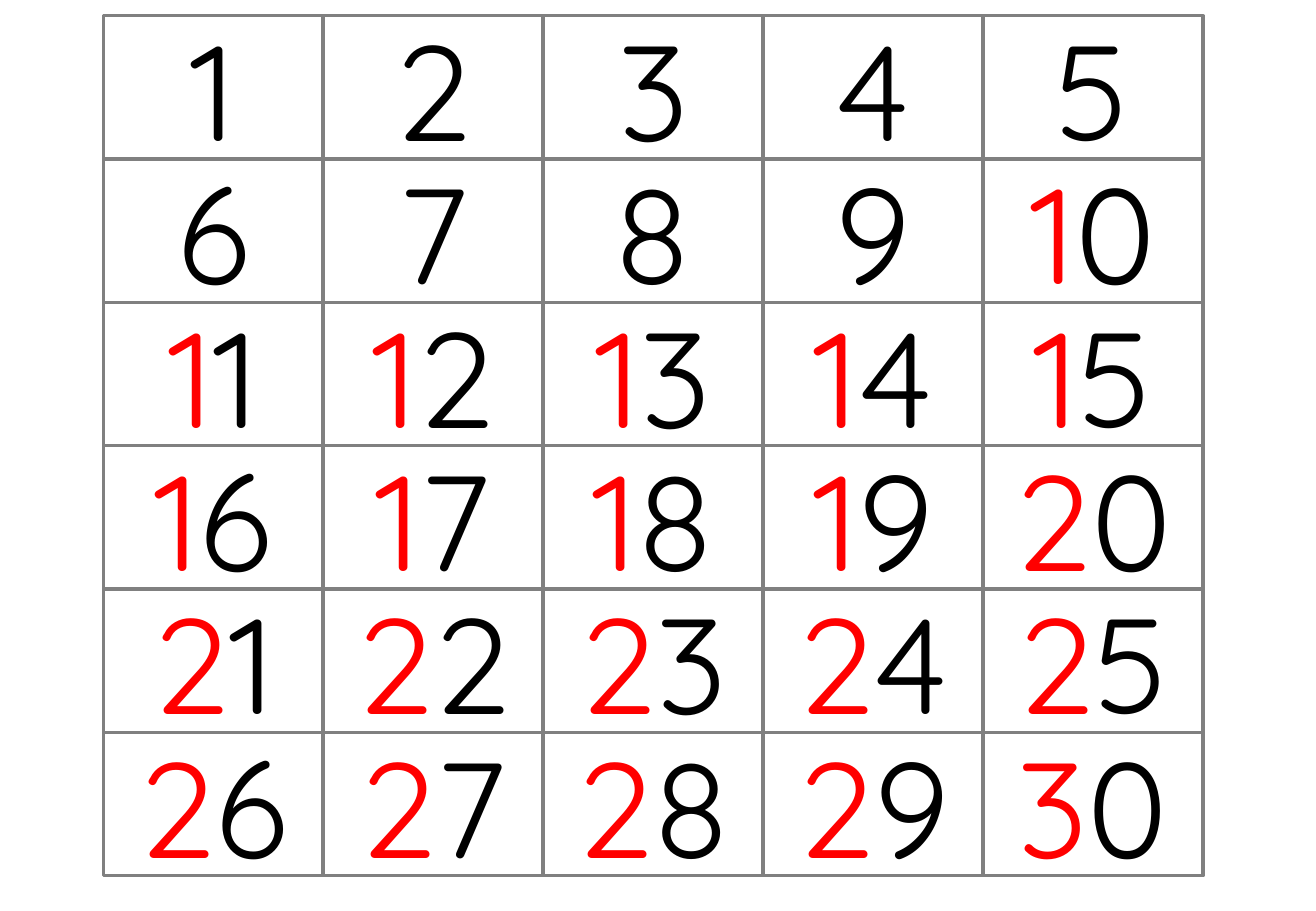
from pptx import Presentation
from pptx.dml.color import RGBColor
from pptx.enum.shapes import MSO_SHAPE as SHAPE
from pptx.enum.text import MSO_ANCHOR as ANCHOR, PP_ALIGN as ALIGN
from pptx.util import Inches, Pt

COLS, ROWS = 5, 6
LEFT, TOP = 0.85, 0.13
CELL_W, CELL_H = 1.81, 1.18
FONT, FONT_SIZE = "Quicksand", 80
WHITE, GREY = "FFFFFF", "808080"
TENS_COLOR, UNITS_COLOR = "FF0000", "000000"


def rgb(color):
    return RGBColor.from_string(color)


def add_digit(p, digit, color):
    r = p.add_run()
    r.text = digit
    r.font.name = FONT
    r.font.size = Pt(FONT_SIZE)
    r.font.color.rgb = rgb(color)


def add_number_cell(s, number, left, top):
    """Draw a bordered cell with the tens digit, if any, set apart by colour."""
    sp = s.shapes.add_shape(SHAPE.RECTANGLE, Inches(left), Inches(top),
                            Inches(CELL_W), Inches(CELL_H))
    sp.shadow.inherit = False
    sp.fill.solid()
    sp.fill.fore_color.rgb = rgb(WHITE)
    sp.line.color.rgb = rgb(GREY)
    sp.line.width = Pt(2)

    tf = sp.text_frame
    tf.vertical_anchor = ANCHOR.MIDDLE
    p = tf.paragraphs[0]
    p.alignment = ALIGN.CENTER
    tens, units = divmod(number, 10)
    if tens:
        add_digit(p, str(tens), TENS_COLOR)
    add_digit(p, str(units), UNITS_COLOR)


def main():
    prs = Presentation()
    prs.slide_width, prs.slide_height = Inches(10.83), Inches(7.5)
    s = prs.slides.add_slide(prs.slide_layouts[6])
    for i in range(COLS * ROWS):
        row, col = divmod(i, COLS)
        add_number_cell(s, i + 1, LEFT + col * CELL_W, TOP + row * CELL_H)
    prs.save("out.pptx")


if __name__ == "__main__":
    main()
